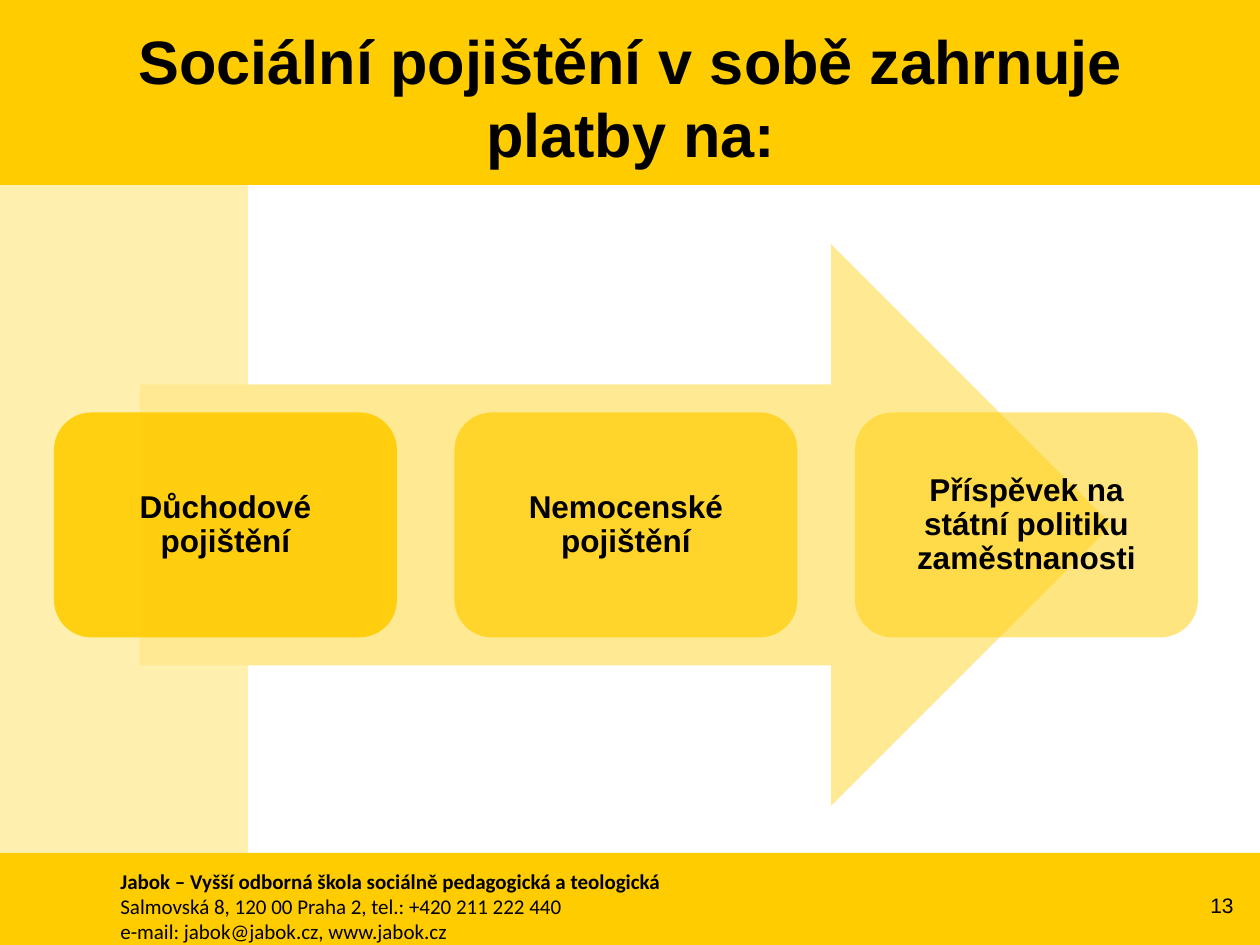
from dataclasses import dataclass

from lxml.etree import SubElement
from pptx import Presentation
from pptx.dml.color import RGBColor
from pptx.enum.shapes import MSO_SHAPE
from pptx.enum.text import MSO_ANCHOR, PP_ALIGN
from pptx.oxml.ns import qn
from pptx.util import Pt

EMU_PER_PX = 914400 / 126


@dataclass(frozen=True)
class Theme:
    gold: str = "FFCC00"
    cream: str = "FFF0AF"
    arrow: str = "FFEA93"
    text: str = "000000"
    heading_font: str = "Arial"
    footer_font: str = "Calibri"
    title_size: int = 35
    card_size: int = 18
    footer_size: int = 12


THEME = Theme()


def px(length):
    return round(length * EMU_PER_PX)


def add_block(slide, kind, box, color, opacity=100):
    """Add a borderless shape, see-through when opacity is below 100."""
    shape = slide.shapes.add_shape(kind, *map(px, box))
    shape.shadow.inherit = False
    shape.line.fill.background()
    shape.fill.solid()
    shape.fill.fore_color.rgb = RGBColor.from_string(color)
    if opacity < 100:
        color_element = shape.fill._xPr.find(qn("a:solidFill"))[0]
        SubElement(color_element, qn("a:alpha"), val=str(opacity * 1000))
    return shape


def write(shape, lines, size, font, align, bold=False, anchor=MSO_ANCHOR.MIDDLE):
    """Fill a shape with lines of text that share one style."""
    frame = shape.text_frame
    frame.word_wrap = True
    frame.vertical_anchor = anchor
    frame.text = "\n".join(lines)
    for paragraph in frame.paragraphs:
        paragraph.alignment = align
        paragraph.font.size = Pt(size)
        paragraph.font.name = font
        paragraph.font.bold = bold
        paragraph.font.color.rgb = RGBColor.from_string(THEME.text)
    return frame


def add_header(slide, box, title):
    left, top, width, height = box
    add_block(slide, MSO_SHAPE.RECTANGLE, box, THEME.gold)
    text_box = slide.shapes.add_textbox(
        px(left + 64), px(top + 18), px(width - 126), px(height - 28))
    write(text_box, [title], THEME.title_size, THEME.heading_font,
          PP_ALIGN.CENTER, bold=True)


def add_footer(slide, box, lines, number):
    left, top, width, height = box
    add_block(slide, MSO_SHAPE.RECTANGLE, box, THEME.gold)

    # School address, with its name in bold
    address = slide.shapes.add_textbox(
        px(left + 108), px(top + 9), px(1032), px(height - 6))
    frame = write(address, lines, THEME.footer_size, THEME.footer_font,
                  PP_ALIGN.LEFT, anchor=MSO_ANCHOR.TOP)
    frame.paragraphs[0].font.bold = True

    # Slide number
    number_box = slide.shapes.add_textbox(
        px(left + width - 93), px(top + 27), px(79), px(50))
    write(number_box, [number], THEME.footer_size, THEME.heading_font,
          PP_ALIGN.RIGHT)


def add_process(slide, box, labels):
    """Place a wide arrow with a row of fading cards across its middle."""
    left, top, width, height = box
    add_block(slide, MSO_SHAPE.RIGHT_ARROW,
              (left + 86, top, width - 172, height), THEME.arrow)

    card_width, card_height = 343, 225
    step = (width - card_width) / (len(labels) - 1)
    card_top = top + (height - card_height) / 2
    for index, label in enumerate(labels):
        card = add_block(
            slide, MSO_SHAPE.ROUNDED_RECTANGLE,
            (left + index * step, card_top, card_width, card_height),
            THEME.gold, opacity=90 - 20 * index)
        frame = write(card, [label], THEME.card_size, THEME.heading_font,
                      PP_ALIGN.CENTER, bold=True)
        frame.margin_left = frame.margin_right = px(20)
        frame.margin_top = frame.margin_bottom = px(20)
        frame.paragraphs[0].line_spacing = 0.9


def main():
    presentation = Presentation()
    presentation.slide_width, presentation.slide_height = px(1260), px(945)
    slide = presentation.slides.add_slide(presentation.slide_layouts[6])

    # Side band
    add_block(slide, MSO_SHAPE.RECTANGLE, (0, 185, 248, 760), THEME.cream)
    add_header(slide, (0, 0, 1260, 185),
               "Sociální pojištění v sobě zahrnuje platby na:")
    add_footer(slide, (0, 853, 1260, 95), [
        "Jabok – Vyšší odborná škola sociálně pedagogická a teologická",
        "Salmovská 8, 120 00 Praha 2, tel.: +420 211 222 440",
        "e-mail: jabok@jabok.cz, www.jabok.cz",
    ], "13")
    add_process(slide, (54, 244, 1144, 562), [
        "Důchodové pojištění",
        "Nemocenské pojištění",
        "Příspěvek na státní politiku zaměstnanosti",
    ])
    presentation.save("out.pptx")


if __name__ == "__main__":
    main()
